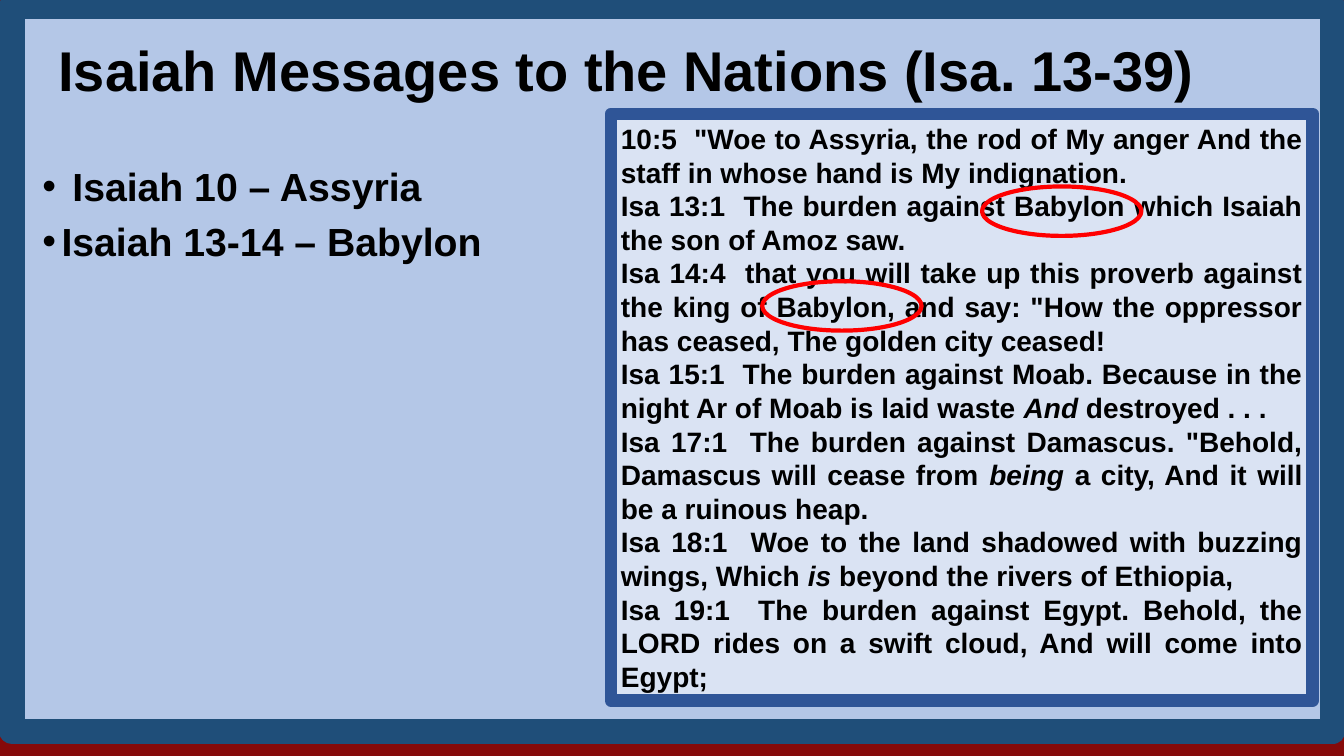
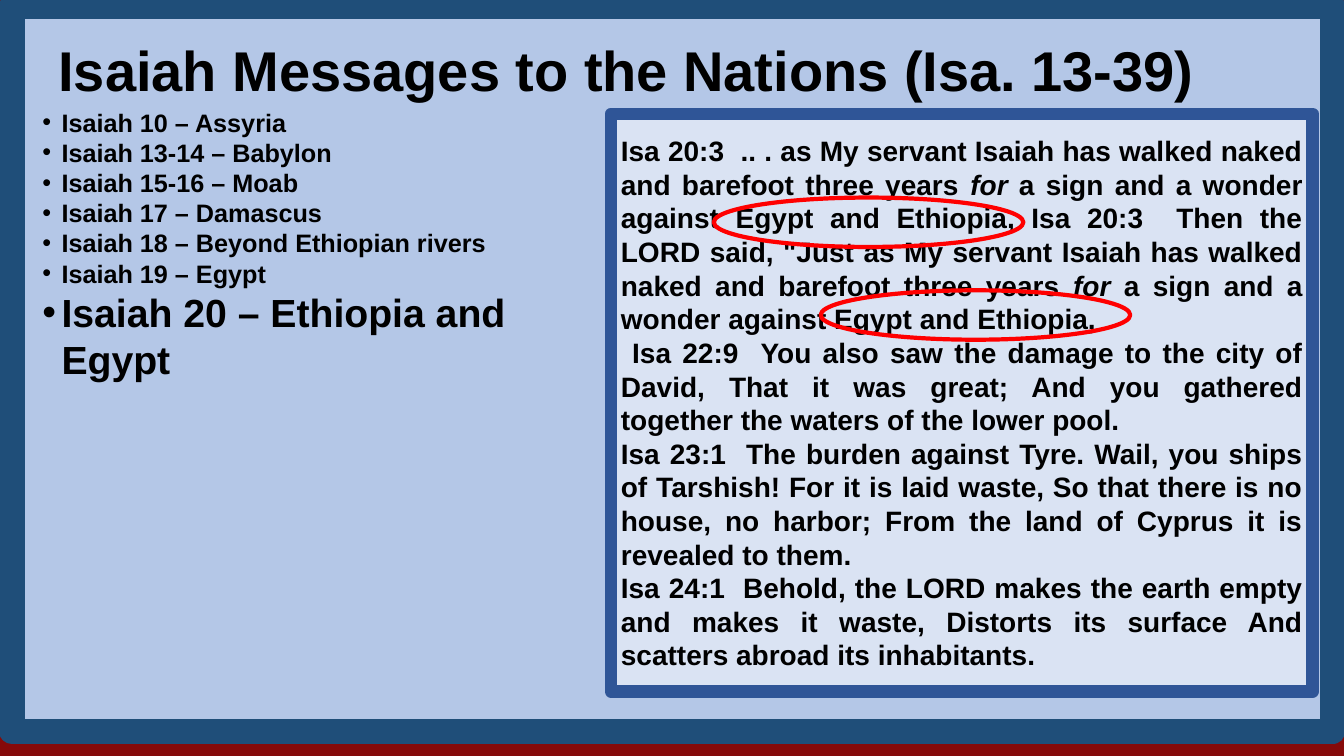
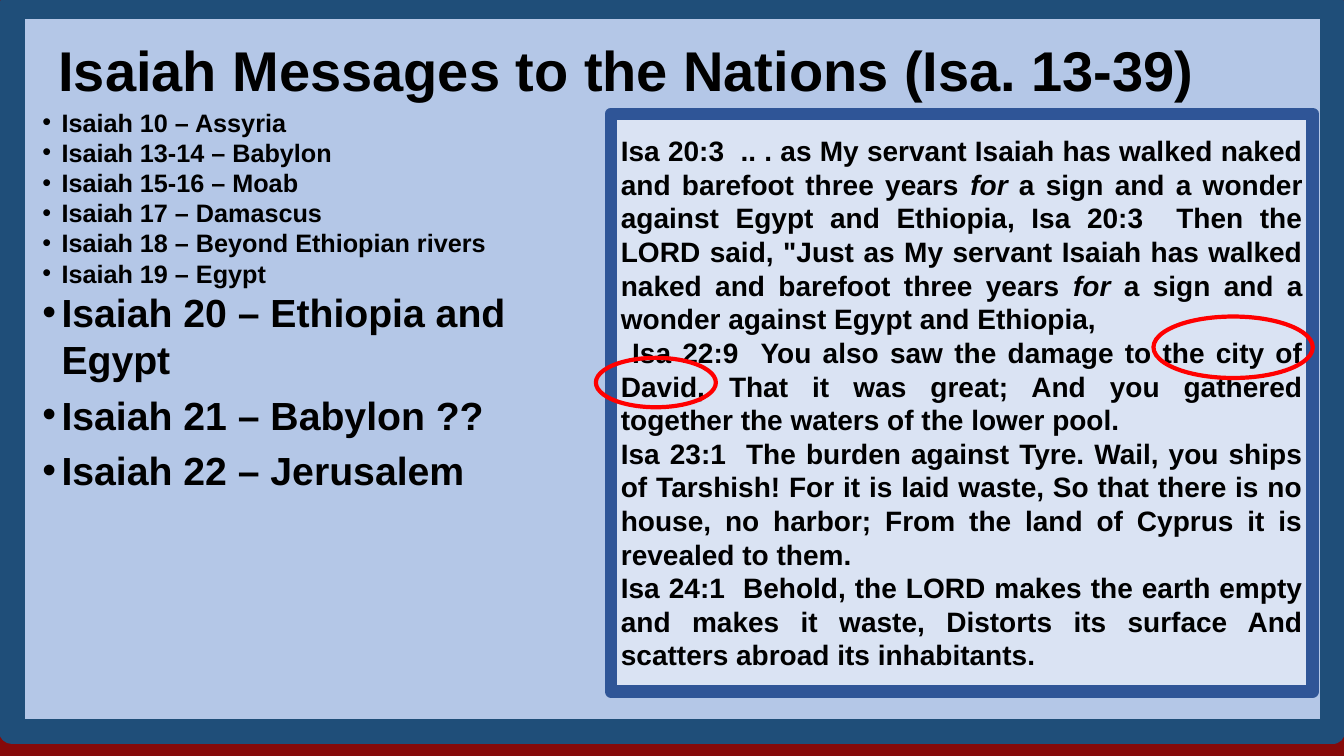
from pptx import Presentation
from pptx import util as u
from pptx.dml.color import RGBColor
from pptx.enum import shapes, text
from pptx.oxml.ns import qn
from lxml import etree

FONT = "Arial"
RED, PANEL, FRAME = "860A0A", "B4C7E7", "1F4E79"
VERSE_FILL, VERSE_LINE = "DAE3F3", "2F5597"
RING, INK = "FF0000", "000000"
TITLE = "Isaiah Messages to the Nations (Isa. 13-39)"
SMALL, LARGE = 18, 28

WOES = [
    '10:5  "Woe to Assyria, the rod of My anger And the staff in whose hand is My indignation.',
    "Isa 13:1  The burden against Babylon which Isaiah the son of Amoz saw.",
    'Isa 14:4  that you will take up this proverb against the king of Babylon, and say: '
    '"How the oppressor has ceased, The golden city ceased!',
    "Isa 15:1  The burden against Moab. Because in the night Ar of Moab is laid waste "
    "*And* destroyed . . .",
    'Isa 17:1  The burden against Damascus. "Behold, Damascus will cease from *being* a city, '
    "And it will be a ruinous heap.",
    "Isa 18:1  Woe to the land shadowed with buzzing wings, Which *is* beyond the rivers of Ethiopia,",
    "Isa 19:1  The burden against Egypt. Behold, the LORD rides on a swift cloud, "
    "And will come into Egypt;",
]
SIGNS = [
    "Isa 20:3  .. . as My servant Isaiah has walked naked and barefoot three years *for* a sign "
    'and a wonder against Egypt and Ethiopia, Isa 20:3  Then the LORD said, "Just as My servant '
    "Isaiah has walked naked and barefoot three years *for* a sign and a wonder against "
    "Egypt and Ethiopia,",
    " Isa 22:9  You also saw the damage to the city of David, That it was great; And you gathered "
    "together the waters of the lower pool.",
    "Isa 23:1  The burden against Tyre. Wail, you ships of Tarshish! For it is laid waste, So that "
    "there is no house, no harbor; From the land of Cyprus it is revealed to them.",
    "Isa 24:1  Behold, the LORD makes the earth empty and makes it waste, Distorts its surface "
    "And scatters abroad its inhabitants.",
]
COVERED = ["Isaiah 10 – Assyria", "Isaiah 13-14 – Babylon", "Isaiah 15-16 – Moab",
           "Isaiah 17 – Damascus", "Isaiah 18 – Beyond Ethiopian rivers", "Isaiah 19 – Egypt"]
EGYPT = "Isaiah 20 – Ethiopia and Egypt"


def color(value):
    """Turn a hex string into a colour."""
    return RGBColor.from_string(value)


def place(item, left, top, width, height):
    """Move and size an item in inches."""
    item.left, item.top = u.Inches(left), u.Inches(top)
    item.width, item.height = u.Inches(width), u.Inches(height)


def add_run(paragraph, words, size, italic=False):
    """Add one bold run to a paragraph."""
    run = paragraph.add_run()
    run.text = words
    run.font.name, run.font.size = FONT, u.Pt(size)
    run.font.bold, run.font.italic = True, italic
    run.font.color.rgb = color(INK)


def next_paragraph(frame, index):
    """Return the first paragraph, or a new one after it."""
    return frame.add_paragraph() if index else frame.paragraphs[0]


def add_outlined(slide, preset, box, line, weight, fill=None):
    """Add an outlined shape, filled when a fill is given."""
    shape = slide.shapes.add_shape(preset, *map(u.Inches, box))
    shape.shadow.inherit = False
    if fill:
        shape.fill.solid()
        shape.fill.fore_color.rgb = color(fill)
    else:
        shape.fill.background()
    shape.line.color.rgb = color(line)
    shape.line.width = u.Pt(weight)
    return shape


def style_template(prs, layout, slide):
    """Give the layout its background, framed panel and title place."""
    background = prs.slide_master.background.fill
    background.solid()
    background.fore_color.rgb = color(RED)
    panel = add_outlined(slide, shapes.MSO_SHAPE.RECTANGLE, (0.12, 0.06, 13.1, 7.2), FRAME, 18, PANEL)
    layout.shapes._spTree.insert(2, panel._element)
    place(layout.placeholders[0], 0.48, 0.3, 12.5, 0.8)


def set_title(slide):
    """Write the shared title."""
    frame = slide.shapes.title.text_frame
    frame.vertical_anchor = text.MSO_ANCHOR.TOP
    frame.auto_size = text.MSO_AUTO_SIZE.NONE
    heading = frame.paragraphs[0]
    heading.alignment = text.PP_ALIGN.LEFT
    add_run(heading, TITLE, 40)


def set_chapters(slide, chapters, top, height):
    """Fill the body with bulleted chapters given as words and size."""
    body = slide.placeholders[1]
    place(body, 0.32, top, 5.54, height)
    frame = body.text_frame
    frame.auto_size = text.MSO_AUTO_SIZE.NONE
    for index, (words, size) in enumerate(chapters):
        chapter = next_paragraph(frame, index)
        chapter.space_before = u.Pt(0)
        chapter.space_after = u.Pt(6 if size == LARGE else 0)
        props = chapter._p.get_or_add_pPr()
        props.set("marL", str(u.Inches(0.19)))
        props.set("indent", str(-u.Inches(0.19)))
        etree.SubElement(props, qn("a:buFont")).set("typeface", FONT)
        etree.SubElement(props, qn("a:buChar")).set("char", "•")
        add_run(chapter, words, size)


def add_verses(slide, verses, height):
    """Add the verse box; words between asterisks are italic."""
    box = add_outlined(slide, shapes.MSO_SHAPE.RECTANGLE, (6.06, 1.13, 6.96, height),
                       VERSE_LINE, 9, VERSE_FILL)
    frame = box.text_frame
    frame.word_wrap = True
    frame.vertical_anchor = text.MSO_ANCHOR.MIDDLE
    for index, verse in enumerate(verses):
        paragraph = next_paragraph(frame, index)
        paragraph.alignment = text.PP_ALIGN.JUSTIFY
        for part, words in enumerate(verse.split("*")):
            add_run(paragraph, words, 20, italic=part % 2 == 1)


def main():
    """Build and save the presentation."""
    prs = Presentation()
    prs.slide_width, prs.slide_height = u.Inches(13.33), u.Inches(7.5)
    layout = prs.slide_layouts[1]
    covered = [(words, SMALL) for words in COVERED]
    pages = [
        ([(" Isaiah 10 – Assyria", LARGE), ("Isaiah 13-14 – Babylon", LARGE)], 1.56, 1.13,
         WOES, 5.82, [(9.74, 1.85, 1.58, 0.49), (7.56, 2.79, 1.58, 0.49)]),
        (covered + [(EGYPT, LARGE)], 1.01, 2.86,
         SIGNS, 5.73, [(8.14, 2.88, 3.07, 0.49), (7.08, 1.96, 3.07, 0.49)]),
        (covered + [(words, LARGE) for words in (EGYPT, "Isaiah 21 – Babylon ??", "Isaiah 22 – Jerusalem")],
         1.01, 3.97, SIGNS, 5.73, [(11.44, 3.14, 1.58, 0.61), (5.91, 3.55, 1.19, 0.49)]),
    ]
    for number, (chapters, top, height, verses, verse_height, rings) in enumerate(pages):
        slide = prs.slides.add_slide(layout)
        if number == 0:
            style_template(prs, layout, slide)
        set_title(slide)
        set_chapters(slide, chapters, top, height)
        add_verses(slide, verses, verse_height)
        for ring in rings:
            add_outlined(slide, shapes.MSO_SHAPE.OVAL, ring, RING, 3)
    prs.save("out.pptx")


if __name__ == "__main__":
    main()
